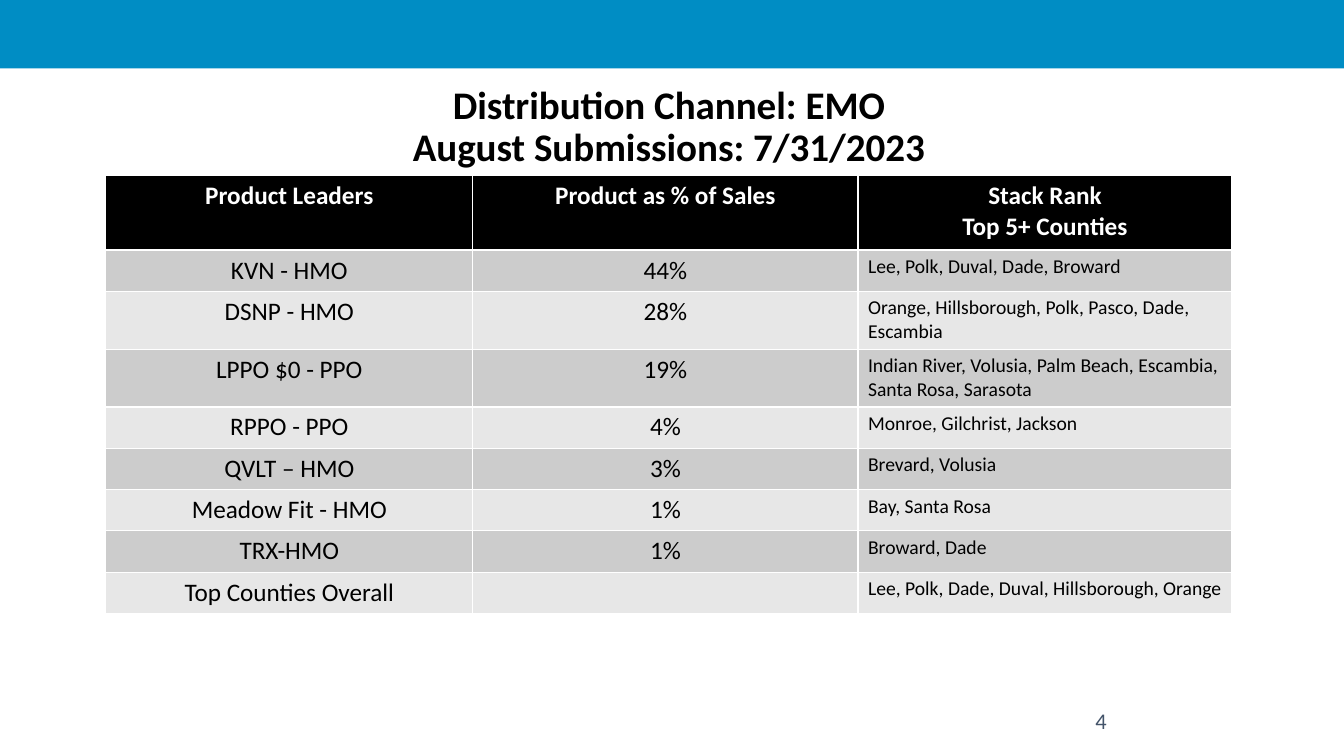
from dataclasses import dataclass

from pptx import Presentation
from pptx.dml.color import RGBColor
from pptx.enum.shapes import MSO_SHAPE as Shape
from pptx.enum.text import MSO_ANCHOR as Anchor, PP_ALIGN as Align
from pptx.util import Inches, Pt


@dataclass(frozen=True)
class Theme:
    font: str = "Calibri"
    bar: str = "008DC4"
    ink: str = "000000"
    paper: str = "FFFFFF"
    muted: str = "44546A"
    bands: tuple = ("CCCCCC", "E7E7E7")
    title_size: float = 27.9
    table_size: int = 18
    county_size: int = 14
    number_size: int = 16


THEME = Theme()

TITLE = "Distribution Channel: EMO\vAugust Submissions: 7/31/2023"
HEADER = ("Product Leaders", "Product as % of Sales", "Stack Rank\nTop 5+ Counties")
PRODUCTS = (
    ("KVN - HMO", "44%", "Lee, Polk, Duval, Dade, Broward"),
    ("DSNP - HMO", "28%", "Orange, Hillsborough, Polk, Pasco, Dade, Escambia"),
    ("LPPO $0 - PPO", "19%",
     "Indian River, Volusia, Palm Beach, Escambia, Santa Rosa, Sarasota"),
    ("RPPO - PPO", "4%", "Monroe, Gilchrist, Jackson"),
    ("QVLT – HMO", "3%", "Brevard, Volusia"),
    ("Meadow Fit - HMO", "1%", "Bay, Santa Rosa"),
    ("TRX-HMO", "1%", "Broward, Dade"),
    ("Top Counties Overall", "", "Lee, Polk, Dade, Duval, Hillsborough, Orange"),
)
COLUMN_WIDTHS = (3.64, 3.82, 3.71)
HEADER_HEIGHT, ROW_HEIGHT, TWO_LINE_HEIGHT = 0.74, 0.41, 0.57
TWO_LINE_ROWS = (2, 3)


def place(shape, left, top, width, height):
    box = {"left": left, "top": top, "width": width, "height": height}
    for name, value in box.items():
        setattr(shape, name, Inches(value))


def write(frame, text, size, color, bold=False, **paragraph_format):
    """Fill a text frame and format its paragraphs and runs."""
    frame.text = text
    font_format = {"name": THEME.font, "size": Pt(size), "bold": bold}
    for paragraph in frame.paragraphs:
        for name, value in paragraph_format.items():
            setattr(paragraph, name, value)
        for run in paragraph.runs:
            for name, value in font_format.items():
                setattr(run.font, name, value)
            run.font.color.rgb = RGBColor.from_string(color)


def add_bar(slide, width, height):
    bar = slide.shapes.add_shape(Shape.RECTANGLE, 0, 0, width, height)
    bar.shadow.inherit = False
    bar.fill.solid()
    bar.fill.fore_color.rgb = RGBColor.from_string(THEME.bar)
    bar.line.fill.background()


def add_title(slide):
    title = slide.shapes.title
    place(title, 1.05, 0.83, 11.17, 0.91)
    write(title.text_frame, TITLE, THEME.title_size, THEME.ink, True,
          alignment=Align.CENTER, line_spacing=0.9)
    title.text_frame.vertical_anchor = Anchor.BOTTOM


def fill_cell(cell, text, fill, size, color, bold, alignment):
    cell.fill.solid()
    cell.fill.fore_color.rgb = RGBColor.from_string(fill)
    write(cell.text_frame, text, size, color, bold, alignment=alignment)


def add_product_table(slide):
    heights = [HEADER_HEIGHT] + [
        TWO_LINE_HEIGHT if number in TWO_LINE_ROWS else ROW_HEIGHT
        for number in range(1, len(PRODUCTS) + 1)
    ]
    table = slide.shapes.add_table(
        len(heights), len(COLUMN_WIDTHS), Inches(1.05), Inches(1.74),
        Inches(sum(COLUMN_WIDTHS)), Inches(sum(heights))).table
    for column, width in zip(table.columns, COLUMN_WIDTHS):
        column.width = Inches(width)
    for row, height in zip(table.rows, heights):
        row.height = Inches(height)

    # Header row
    for index, text in enumerate(HEADER):
        fill_cell(table.cell(0, index), text, THEME.ink, THEME.table_size,
                  THEME.paper, True, Align.CENTER)

    # Banded product rows, with smaller left-aligned counties
    for number, product in enumerate(PRODUCTS):
        for index, text in enumerate(product):
            is_county = index == 2
            fill_cell(table.cell(number + 1, index), text, THEME.bands[number % 2],
                      THEME.county_size if is_county else THEME.table_size,
                      THEME.ink, False, Align.LEFT if is_county else Align.CENTER)


def add_page_number(slide, number):
    box = slide.shapes.add_textbox(Inches(9.42), Inches(6.95), Inches(3), Inches(0.4))
    box.text_frame.word_wrap = True
    box.text_frame.vertical_anchor = Anchor.MIDDLE
    write(box.text_frame, number, THEME.number_size, THEME.muted,
          alignment=Align.CENTER, space_after=Pt(6))


def main():
    presentation = Presentation()
    presentation.slide_width = Inches(13.33)
    presentation.slide_height = Inches(7.5)
    title_only = presentation.slide_layouts[5]
    slide = presentation.slides.add_slide(title_only)

    add_bar(slide, presentation.slide_width, Inches(0.68))
    add_title(slide)
    add_product_table(slide)
    add_page_number(slide, "4")
    presentation.save("out.pptx")


if __name__ == "__main__":
    main()
